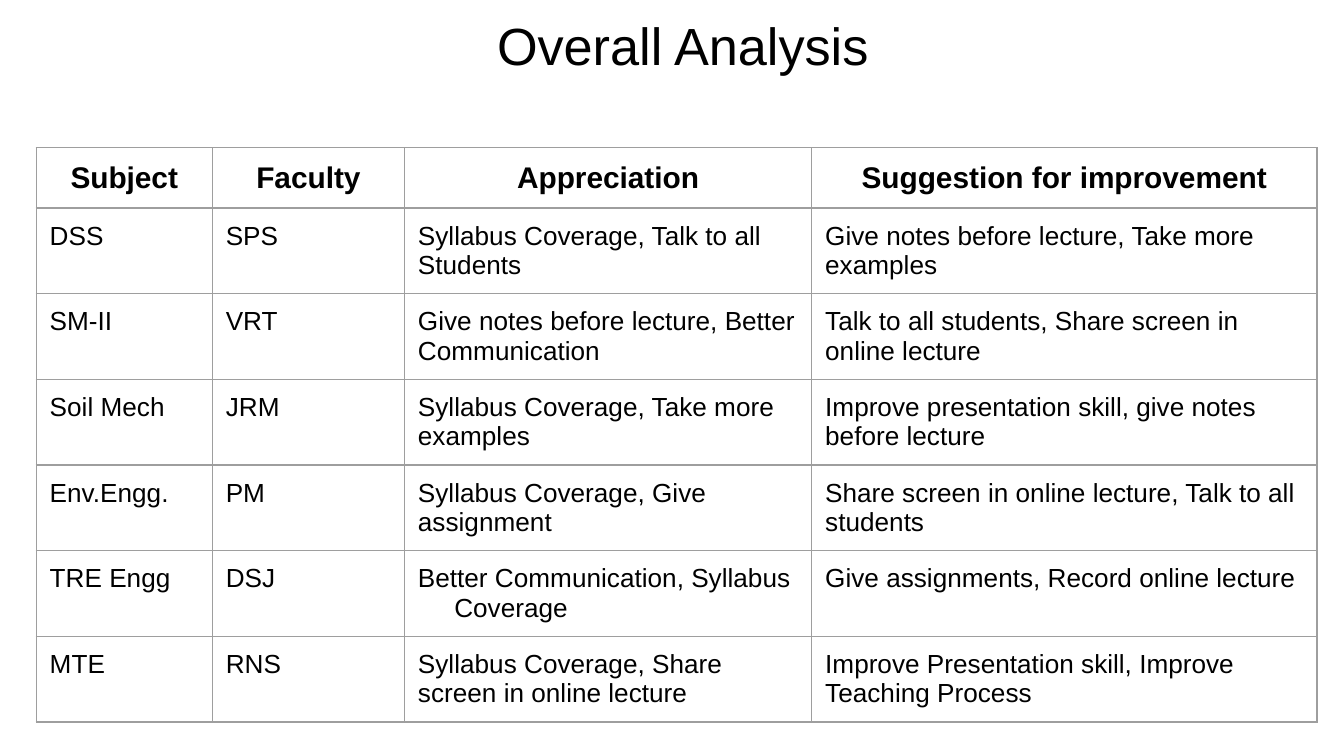
from lxml import etree
from pptx import Presentation
from pptx.dml.color import RGBColor
from pptx.enum.text import MSO_ANCHOR, PP_ALIGN
from pptx.oxml.ns import qn
from pptx.util import Inches, Pt

CENTER, LEFT = PP_ALIGN.CENTER, PP_ALIGN.LEFT
TOP = MSO_ANCHOR.TOP

COLORS = {"text": "000000", "paper": "FFFFFF", "border": "9E9E9E"}
FONT = "Arial"
INSET = Inches(0.1)
BORDER_WIDTH = Pt(0.75)
SLIDE_WIDTH = Inches(10)
SLIDE_HEIGHT = SLIDE_WIDTH * 9 // 16

TITLE = "Overall Analysis"
HEADINGS = ("Subject", "Faculty", "Appreciation", "Suggestion for improvement")
FEEDBACK = [
    ("DSS", "SPS", "Syllabus Coverage, Talk to all Students",
     "Give notes before lecture, Take more examples"),
    ("SM-II", "VRT", "Give notes before lecture, Better Communication",
     "Talk to all students, Share screen in online lecture"),
    ("Soil Mech", "JRM", "Syllabus Coverage, Take more examples",
     "Improve presentation skill, give notes before lecture"),
    ("Env.Engg.", "PM", "Syllabus Coverage, Give assignment",
     "Share screen in online lecture, Talk to all students"),
    ("TRE Engg", "DSJ", "Better Communication, Syllabus Coverage",
     "Give assignments, Record online lecture"),
    ("MTE", "RNS", "Syllabus Coverage, Share screen in online lecture",
     "Improve Presentation skill, Improve Teaching Process"),
]
HANGING = {"Better Communication, Syllabus Coverage": 0.27}
COLUMN_WIDTHS = (1.31, 1.43, 3.03, 3.76)
HEADING_HEIGHT, FEEDBACK_HEIGHT = 0.44, 0.63


def write(holder, text, size, bold=False, align=LEFT, hanging=0):
    holder.margin_left = holder.margin_right = INSET
    holder.margin_top = holder.margin_bottom = INSET
    frame = getattr(holder, "text_frame", holder)
    paragraph = frame.paragraphs[0]
    paragraph.alignment = align
    if hanging:
        properties = paragraph._p.get_or_add_pPr()
        properties.set("marL", str(Inches(hanging)))
        properties.set("indent", str(-Inches(hanging)))
    run = paragraph.add_run()
    run.text = text
    run.font.name = FONT
    run.font.size = Pt(size)
    run.font.bold = bold
    run.font.color.rgb = RGBColor.from_string(COLORS["text"])


def style_cell(cell):
    cell.vertical_anchor = TOP
    cell.fill.solid()
    cell.fill.fore_color.rgb = RGBColor.from_string(COLORS["paper"])
    properties = cell._tc.get_or_add_tcPr()
    for position, side in enumerate(("lnL", "lnR", "lnT", "lnB")):
        border = etree.Element(qn(f"a:{side}"), w=str(BORDER_WIDTH))
        fill = etree.SubElement(border, qn("a:solidFill"))
        etree.SubElement(fill, qn("a:srgbClr"), val=COLORS["border"])
        properties.insert(position, border)


def add_title(slide):
    title = slide.shapes.title
    title.left, title.top = Inches(0.16), Inches(0)
    title.width, title.height = Inches(9.84), Inches(0.69)
    title.text_frame.vertical_anchor = TOP
    write(title.text_frame, TITLE, 28, align=CENTER)


def add_feedback_table(slide):
    rows = [HEADINGS, *FEEDBACK]
    heights = [HEADING_HEIGHT] + [FEEDBACK_HEIGHT] * len(FEEDBACK)
    table = slide.shapes.add_table(
        len(rows), len(HEADINGS), Inches(0.27), Inches(1.1),
        Inches(sum(COLUMN_WIDTHS)), Inches(sum(heights))).table
    for column, width in zip(table.columns, COLUMN_WIDTHS):
        column.width = Inches(width)
    for r, (texts, height) in enumerate(zip(rows, heights)):
        table.rows[r].height = Inches(height)
        heading = r == 0
        for c, text in enumerate(texts):
            cell = table.cell(r, c)
            style_cell(cell)
            write(cell, text, 16 if heading else 14, bold=heading,
                  align=CENTER if heading else LEFT,
                  hanging=HANGING.get(text, 0))


def main():
    deck = Presentation()
    deck.slide_width, deck.slide_height = SLIDE_WIDTH, SLIDE_HEIGHT
    slide = deck.slides.add_slide(deck.slide_layouts[5])
    add_title(slide)
    add_feedback_table(slide)
    deck.save("out.pptx")


if __name__ == "__main__":
    main()
